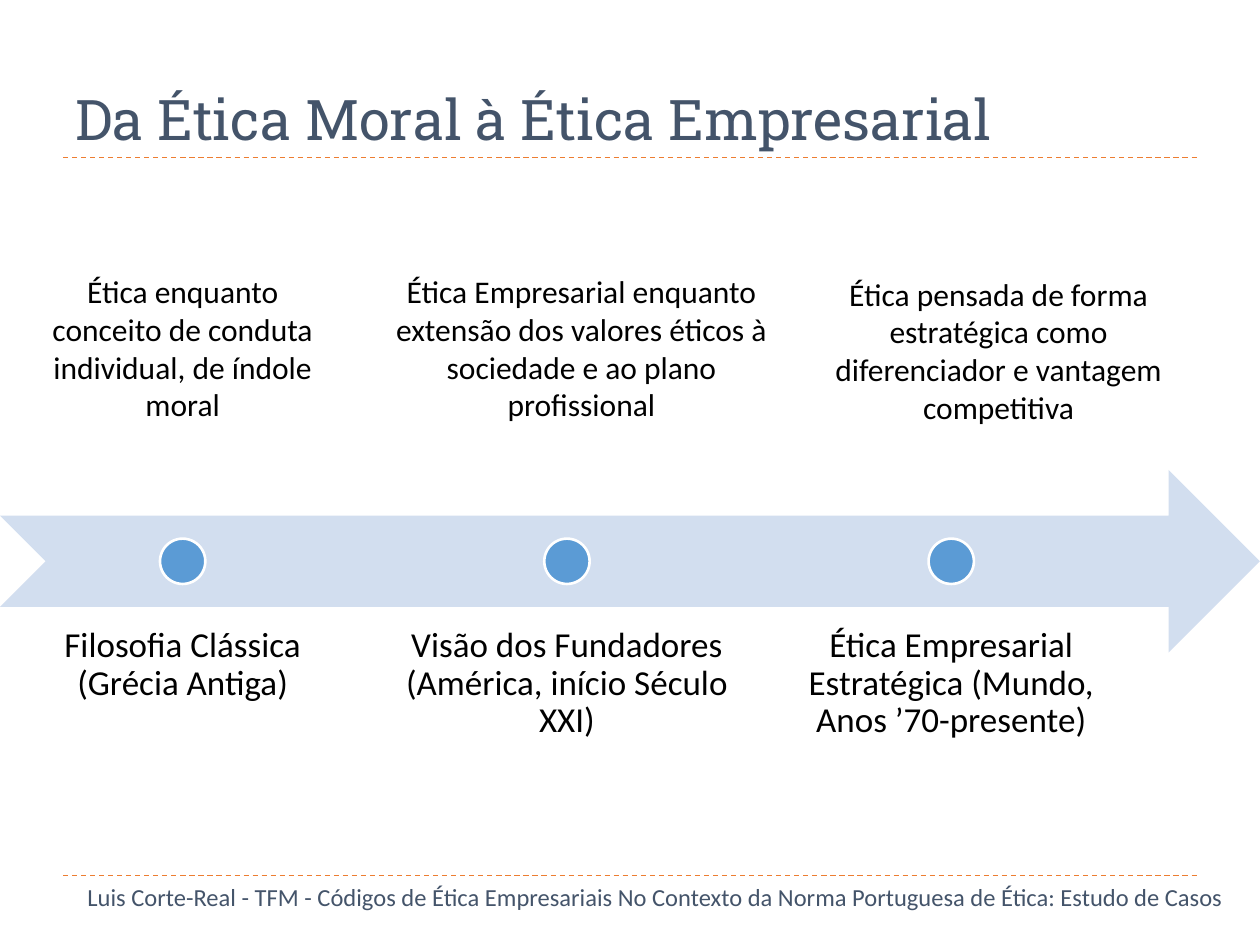
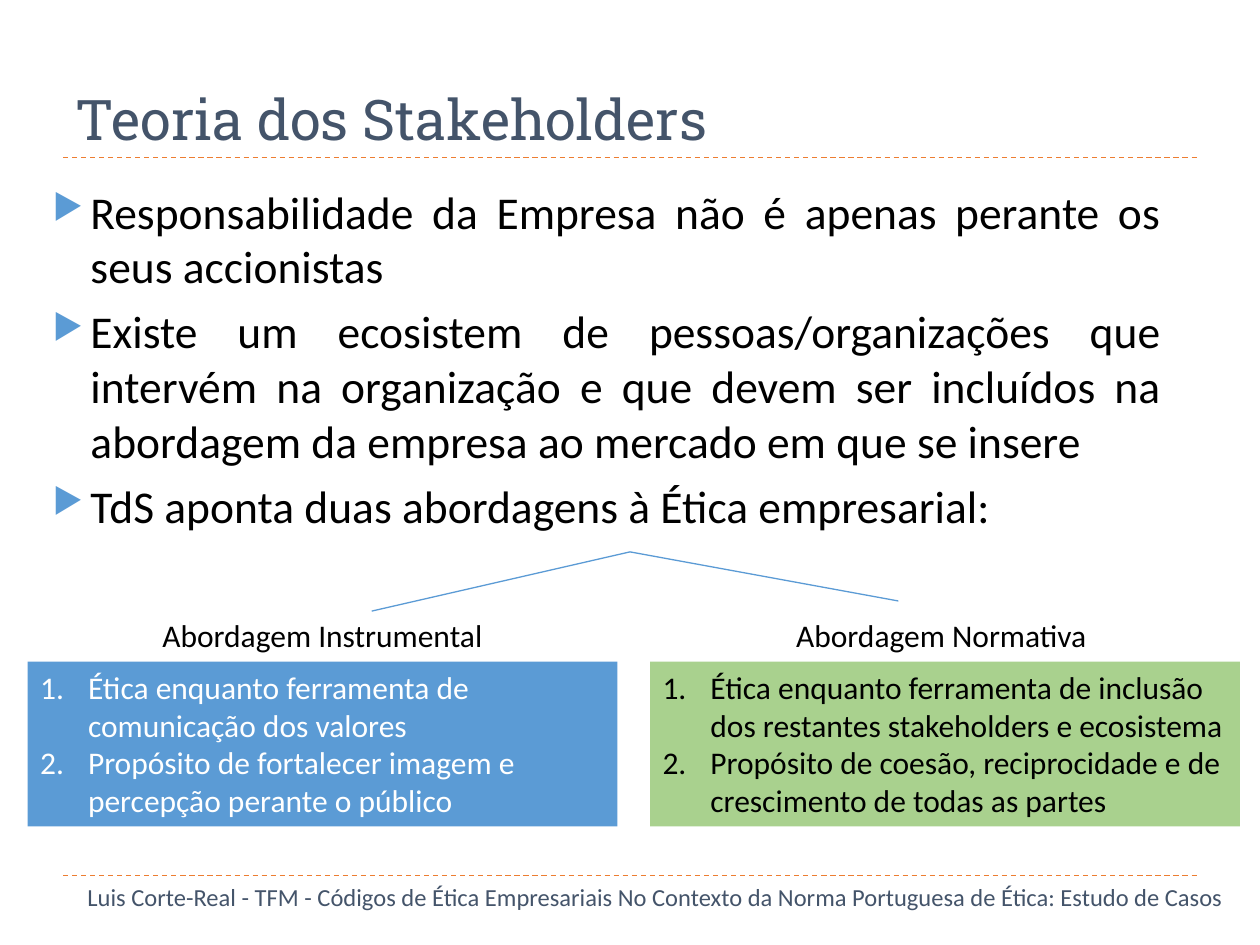
from lxml.etree import SubElement
from pptx import Presentation
from pptx.dml.color import RGBColor
from pptx.enum.dml import MSO_LINE
from pptx.enum.shapes import MSO_CONNECTOR, MSO_SHAPE as SHAPE
from pptx.enum.text import MSO_ANCHOR as ANCHOR, PP_ALIGN as ALIGN
from pptx.oxml.ns import qn
from pptx.util import Inches, Pt

BLACK, WHITE, SLATE = "000000", "FFFFFF", "44546A"
BLUE, PALE, GREEN, ORANGE = "5B9BD5", "D2DEEF", "A9D18E", "ED7D31"
TITLE_FONT, BODY_FONT = "Roboto Slab", "Calibri"
FOOTER = ("Luis Corte-Real - TFM - Códigos de Ética Empresariais No Contexto "
          "da Norma Portuguesa de Ética: Estudo de Casos")

ERAS = ["Filosofia Clássica (Grécia Antiga)",
        "Visão dos Fundadores\v(América, início Século XXI)",
        "Ética Empresarial Estratégica (Mundo, Anos ’70-presente)"]
CONCEPTS = [
    ((0.3, 2.11, 2.3, 1.31),
     "Ética enquanto conceito de conduta individual, de índole moral"),
    ((2.96, 2.11, 3.31, 1.31),
     "Ética Empresarial enquanto extensão dos valores éticos à sociedade e ao plano profissional"),
    ((6.27, 2.13, 3.31, 1.31),
     "Ética pensada de forma estratégica como diferenciador e vantagem competitiva")]
THEORY = [
    "Responsabilidade da Empresa não é apenas perante os seus accionistas",
    "Existe um ecosistem de pessoas/organizações que intervém na organização e que devem "
    "ser incluídos na abordagem da empresa ao mercado em que se insere",
    "TdS aponta duas abordagens à Ética empresarial:"]
APPROACHES = [
    dict(label="Abordagem Instrumental", label_box=(1.19, 4.84, 2.74, 0.4),
         box=(0.22, 5.25, 4.68, 1.31), fill=BLUE, color=WHITE, branch=(2.95, 4.85),
         points=["Ética enquanto ferramenta de comunicação dos valores",
                 "Propósito de fortalecer imagem e percepção perante o público"]),
    dict(label="Abordagem Normativa", label_box=(6.22, 4.84, 2.55, 0.4),
         box=(5.16, 5.25, 4.68, 1.31), fill=GREEN, color=BLACK, branch=(7.13, 4.77),
         points=["Ética enquanto ferramenta de inclusão dos restantes stakeholders e ecosistema",
                 "Propósito de coesão, reciprocidade e de crescimento de todas as partes"])]


def rgb(value):
    """Turn a hex string into a colour."""
    return RGBColor.from_string(value)


def set_all(target, values):
    """Set each named attribute on the target."""
    for name, value in values.items():
        setattr(target, name, value)


def add_bullet(p, indent, kind, color=None, size=None, **marker):
    """Give a paragraph a hanging indent and a bullet element."""
    pPr = p._p.get_or_add_pPr()
    pPr.set("marL", str(Inches(indent)))
    pPr.set("indent", str(-Inches(indent)))
    if color:
        SubElement(SubElement(pPr, qn("a:buClr")), qn("a:srgbClr"), val=color)
    if size:
        SubElement(pPr, qn("a:buSzPct"), val=str(size * 1000))
    SubElement(pPr, qn(kind), **marker)


def write(tf, texts, size, color=BLACK, font=BODY_FONT, frame=None, para=None, bullet=None):
    """Fill a text frame with equally formatted paragraphs."""
    set_all(tf, {"word_wrap": True, "vertical_anchor": ANCHOR.TOP, **(frame or {})})
    for i, text in enumerate(texts):
        p = tf.add_paragraph() if i else tf.paragraphs[0]
        p.text = text
        set_all(p, {"alignment": ALIGN.LEFT, **(para or {})})
        if bullet:
            add_bullet(p, **bullet)
        for r in p.runs:
            set_all(r.font, {"size": Pt(size), "name": font})
            r.font.color.rgb = rgb(color)


def add_text(s, box, texts, size, **style):
    """Add a text box in the given box."""
    write(s.shapes.add_textbox(*map(Inches, box)).text_frame, texts, size, **style)


def add_shape(s, kind, box, fill, line=None):
    """Add a flat filled shape, outlined only if a line colour is given."""
    sp = s.shapes.add_shape(kind, *map(Inches, box))
    sp.shadow.inherit = False
    sp.fill.solid()
    sp.fill.fore_color.rgb = rgb(fill)
    if line:
        sp.line.color.rgb = rgb(line)
        sp.line.width = Pt(1.5)
    else:
        sp.line.fill.background()
    return sp


def add_line(s, start, end, color, dash=None):
    """Add a thin straight line without a shadow."""
    line = s.shapes.add_connector(MSO_CONNECTOR.STRAIGHT, *map(Inches, (*start, *end)))
    line.line.color.rgb = rgb(color)
    set_all(line.line, {"width": Pt(0.75), "dash_style": dash})
    SubElement(line._element.spPr, qn("a:effectLst"))


def add_base_slide(prs, title):
    """Add a slide with the shared rules, title and footer."""
    s = prs.slides.add_slide(prs.slide_layouts[6])
    for y in (6.95, 1.25):
        add_line(s, (0.5, y), (9.5, y), ORANGE, MSO_LINE.DASH)
    add_text(s, (0.5, 0.17, 9, 1.08), [title], 32, color=SLATE, font=TITLE_FONT,
             frame={"vertical_anchor": ANCHOR.BOTTOM})
    add_text(s, (0.12, 6.95, 9.69, 0.34), [FOOTER], 14, color=SLATE,
             para={"alignment": ALIGN.RIGHT})
    return s


def add_timeline(s, box, eras):
    """Add the arrow with one dot and caption per era."""
    x, y, w, h = box
    step, caption_w, dot = 3.05, 2.9, 0.36
    insets = {f"margin_{side}": Inches(0.16) for side in ("left", "top", "right", "bottom")}
    add_shape(s, SHAPE.NOTCHED_RIGHT_ARROW, box, PALE)
    for i, era in enumerate(eras):
        left = x + i * step
        add_text(s, (left, y + 0.75 * h, caption_w, h), [era], 20, frame=insets,
                 para={"alignment": ALIGN.CENTER, "line_spacing": 0.9})
        add_shape(s, SHAPE.OVAL, (left + (caption_w - dot) / 2, y + (h - dot) / 2, dot, dot),
                  BLUE, WHITE)


def add_approach(s, apex, label, label_box, box, fill, color, branch, points):
    """Add a branch line, its label and the numbered panel below."""
    add_line(s, branch, apex, BLUE)
    add_text(s, label_box, [label], 18, frame={"word_wrap": False})
    panel = add_shape(s, SHAPE.RECTANGLE, box, fill)
    write(panel.text_frame, points, 18, color=color,
          bullet=dict(indent=0.38, kind="a:buAutoNum", type="arabicPeriod"))


def build_evolution(prs):
    """Build the slide on the evolution of ethics."""
    s = add_base_slide(prs, "Da Ética Moral à Ética Empresarial")
    add_timeline(s, (0, 3.73, 10, 1.45), ERAS)
    for box, text in CONCEPTS:
        add_text(s, box, [text], 18, para={"alignment": ALIGN.CENTER})


def build_stakeholders(prs):
    """Build the slide on stakeholder theory."""
    s = add_base_slide(prs, "Teoria dos Stakeholders")
    add_text(s, (0.32, 1.41, 9, 5.4), THEORY, 26,
             para={"alignment": ALIGN.JUSTIFY, "space_before": Pt(6)},
             bullet=dict(indent=0.3, kind="a:buChar", color=BLUE, size=76, char="▶"))
    for approach in APPROACHES:
        add_approach(s, (5, 4.38), **approach)


def main():
    """Build and save the presentation."""
    prs = Presentation()
    set_all(prs, {"slide_width": Inches(10), "slide_height": Inches(7.5)})
    build_evolution(prs)
    build_stakeholders(prs)
    prs.save("out.pptx")


if __name__ == "__main__":
    main()
